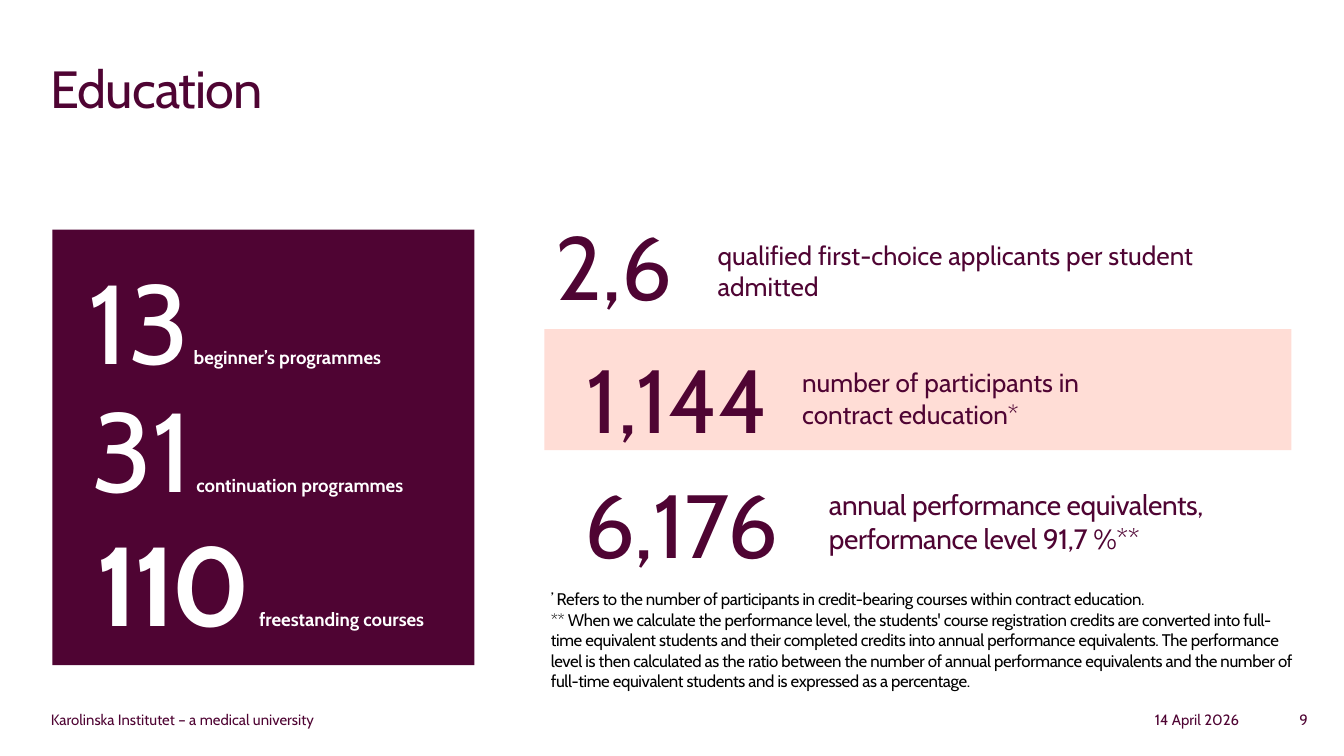
from pptx import Presentation
from pptx.dml.color import RGBColor
from pptx.enum.shapes import MSO_SHAPE as SHAPE
from pptx.enum.text import PP_ALIGN as ALIGN
from pptx.util import Inches, Pt

PLUM, PINK, WHITE, BLACK = "4F0433", "FFDDD6", "FFFFFF", "000000"


def rgb(value):
    return RGBColor.from_string(value)


class Deck:
    font = "Cabin"

    def __init__(self, width, height):
        self.prs = Presentation()
        self.prs.slide_width, self.prs.slide_height = Inches(width), Inches(height)
        self.s = self.prs.slides.add_slide(self.prs.slide_layouts[6])

    def panel(self, x, y, w, h, fill):
        sp = self.s.shapes.add_shape(SHAPE.RECTANGLE, *map(Inches, (x, y, w, h)))
        sp.shadow.inherit = False
        sp.fill.solid()
        sp.fill.fore_color.rgb = rgb(fill)
        sp.line.fill.background()

    def run(self, p, text, size, color=PLUM, bold=False, spacing=0):
        r = p.add_run()
        r.text = text
        fmt = {"name": self.font, "size": Pt(size), "bold": bold}
        for key, value in fmt.items():
            setattr(r.font, key, value)
        r.font.color.rgb = rgb(color)
        if spacing:
            r._r.get_or_add_rPr().set("spc", str(round(spacing * 100)))

    def box(self, x, y, w, h):
        tf = self.s.shapes.add_textbox(*map(Inches, (x, y, w, h))).text_frame
        tf.word_wrap = True
        return tf

    def text(self, x, y, w, h, paragraphs, size, align=ALIGN.LEFT, leading=None, **style):
        tf = self.box(x, y, w, h)
        for i, content in enumerate(paragraphs):
            p = tf.add_paragraph() if i else tf.paragraphs[0]
            p.alignment = align
            if leading:
                p.line_spacing = Pt(leading)
            for j, line in enumerate(content.split("\n")):
                if j:
                    p.add_line_break()
                self.run(p, line, size, **style)

    def count(self, x, y, w, number, caption, gap=10, **style):
        p = self.box(x, y, w, 1.11).paragraphs[0]
        self.run(p, number, 60, WHITE, **style)
        self.run(p, " ", gap, WHITE)
        self.run(p, caption, 10, WHITE, bold=True)


# Widescreen slide, 16:9
deck = Deck(10, 10 * 9 / 16)

# Title
deck.text(0.28, 0.37, 9.44, 0.94, ["Education"], 28, spacing=-0.5)

# Programme counts
deck.panel(0.39, 1.71, 3.14, 3.24, PLUM)
deck.count(0.56, 1.83, 3.12, "13", "beginner’s programmes")
deck.count(0.58, 2.78, 3.19, "31", "continuation programmes")
deck.count(0.62, 3.78, 3.32, "110", "freestanding courses", gap=20, bold=True, spacing=-2)

# Key figures: number position, number, caption box, caption, caption style
deck.panel(4.05, 2.45, 5.56, 0.9, PINK)
figures = [
    (3.39, 1.52, "2,6", (5.24, 1.73, 4.11, 0.57),
     "qualified first-choice applicants per student admitted", {"size": 14}),
    (3.86, 2.51, "1,144", (5.87, 2.68, 3.74, 0.57),
     "number of participants in\ncontract education*", {"size": 14}),
    (3.89, 3.44, "6,176", (6.07, 3.58, 3.54, 0.61),
     "annual performance equivalents,\nperformance level 91,7 %**", {"size": 15, "spacing": -0.2}),
]
for x, y, number, place, caption, style in figures:
    deck.text(x, y, 2.36, 0.91, [number], 48, ALIGN.CENTER)
    deck.text(*place, [caption], **style)

# Footnotes
notes = [
    "’ Refers to the number of participants in credit-bearing courses within contract education.",
    "** When we calculate the performance level, the students' course registration credits are "
    "converted into full-time equivalent students and their completed credits into annual "
    "performance equivalents. The performance level is then calculated as the ratio between the "
    "number of annual performance equivalents and the number of full-time equivalent students "
    "and is expressed as a percentage.",
]
deck.text(4, 4.33, 5.72, 0.6, notes, 9, leading=11, color=BLACK, spacing=-0.2)

# Footer
for x, w, words, align in [
    (0.28, 2.83, "Karolinska Institutet – a medical university", ALIGN.LEFT),
    (7.24, 2.08, "14 April 2026", ALIGN.RIGHT),
    (9.08, 0.75, "9", ALIGN.RIGHT),
]:
    deck.text(x, 5.24, w, 0.19, [words], 8, align)

deck.prs.save("out.pptx")
